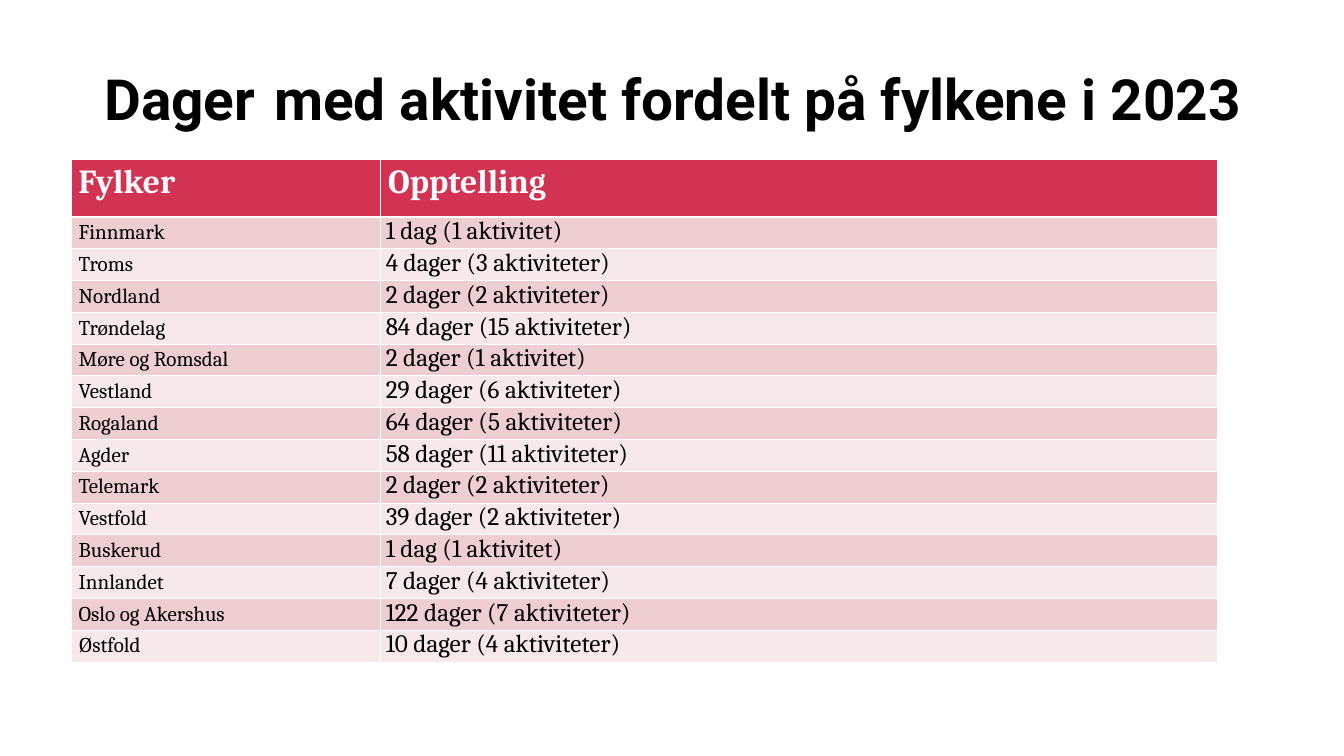
from lxml import etree
from pptx import Presentation
from pptx.dml.color import RGBColor
from pptx.enum.text import MSO_ANCHOR, MSO_AUTO_SIZE, PP_ALIGN
from pptx.oxml.ns import qn
from pptx.util import Inches, Pt

BOTTOM = MSO_ANCHOR.BOTTOM
NO_AUTOFIT = MSO_AUTO_SIZE.NONE
LEFT = PP_ALIGN.LEFT
TITLE_ONLY = 5

SLIDE_WIDTH = Inches(17.78)
SLIDE_HEIGHT = Inches(10)
COLORS = {
    "text": "000000",
    "header": "D33352",
    "header_text": "FFFFFF",
    "band_dark": "EFCED1",
    "band_light": "F7E8E9",
    "grid": "FFFFFF",
}
HEADINGS = ("Fylker", "Opptelling")
COUNTIES = [
    ("Finnmark", 1, 1),
    ("Troms", 4, 3),
    ("Nordland", 2, 2),
    ("Trøndelag", 84, 15),
    ("Møre og Romsdal", 2, 1),
    ("Vestland", 29, 6),
    ("Rogaland", 64, 5),
    ("Agder", 58, 11),
    ("Telemark", 2, 2),
    ("Vestfold", 39, 2),
    ("Buskerud", 1, 1),
    ("Innlandet", 7, 4),
    ("Oslo og Akershus", 122, 7),
    ("Østfold", 10, 4),
]


def share_box(left, top, width, height):
    return (
        int(SLIDE_WIDTH * left),
        int(SLIDE_HEIGHT * top),
        int(SLIDE_WIDTH * width),
        int(SLIDE_HEIGHT * height),
    )


def format_run(run, font_name, size, color, bold):
    run.font.name = font_name
    run.font.size = Pt(size)
    run.font.bold = bold
    run.font.color.rgb = RGBColor.from_string(COLORS[color])


def count_text(days, activities):
    day_word = "dag" if days == 1 else "dager"
    activity_word = "aktivitet" if activities == 1 else "aktiviteter"
    return f"{days} {day_word} ({activities} {activity_word})"


def add_borders(cell, bottom_width):
    properties = cell._tc.get_or_add_tcPr()
    widths = {"lnL": 1, "lnR": 1, "lnT": 1, "lnB": bottom_width}
    for position, (side, width) in enumerate(widths.items()):
        border = etree.Element(qn(f"a:{side}"), w=str(Pt(width)))
        fill = etree.SubElement(border, qn("a:solidFill"))
        etree.SubElement(fill, qn("a:srgbClr"), val=COLORS["grid"])
        properties.insert(position, border)


def fill_cell(cell, text, size, fill, color="text", bold=False, bottom_width=1):
    cell.text_frame.text = text
    format_run(cell.text_frame.paragraphs[0].runs[0], "Cambria", size, color, bold)
    cell.fill.solid()
    cell.fill.fore_color.rgb = RGBColor.from_string(COLORS[fill])
    add_borders(cell, bottom_width)


def place_title(slide, box):
    title = slide.shapes.title
    title.left, title.top, title.width, title.height = box
    frame = title.text_frame
    frame.word_wrap = True
    frame.auto_size = NO_AUTOFIT
    frame.vertical_anchor = BOTTOM
    frame.margin_left = frame.margin_right = 0
    frame.margin_top = frame.margin_bottom = 0
    heading = frame.paragraphs[0]
    heading.alignment = LEFT
    heading.line_spacing = 0.9
    pieces = [
        ("Dager", 54),
        (" ", 72),
        ("med aktivitet fordelt på fylkene i 2023", 54),
    ]
    for text, size in pieces:
        run = heading.add_run()
        run.text = text
        format_run(run, "Roboto", size, "text", True)


def place_county_table(slide, box):
    left, top, width, height = box
    table = slide.shapes.add_table(len(COUNTIES) + 1, 2, *box).table
    table.columns[0].width = int(width * 0.27)
    table.columns[1].width = width - table.columns[0].width
    header_height = int(height * 0.117)
    row_height = (height - header_height) // len(COUNTIES)
    for index, row in enumerate(table.rows):
        row.height = row_height if index else header_height

    for column, heading in enumerate(HEADINGS):
        fill_cell(table.cell(0, column), heading, 32, "header", "header_text", True, 3)

    for row, (county, days, activities) in enumerate(COUNTIES, start=1):
        band = "band_dark" if row % 2 else "band_light"
        fill_cell(table.cell(row, 0), county, 20, band)
        count = table.cell(row, 1)
        fill_cell(count, count_text(days, activities), 24, band)
        count.margin_left = count.margin_right = Inches(0.07)
        count.margin_top = count.margin_bottom = 0


def main():
    presentation = Presentation()
    presentation.slide_width = SLIDE_WIDTH
    presentation.slide_height = SLIDE_HEIGHT
    slide = presentation.slides.add_slide(presentation.slide_layouts[TITLE_ONLY])
    place_title(slide, share_box(0.0776, 0.032, 0.8526, 0.149))
    place_county_table(slide, share_box(0.0529, 0.211, 0.8526, 0.65))
    presentation.save("out.pptx")


if __name__ == "__main__":
    main()
